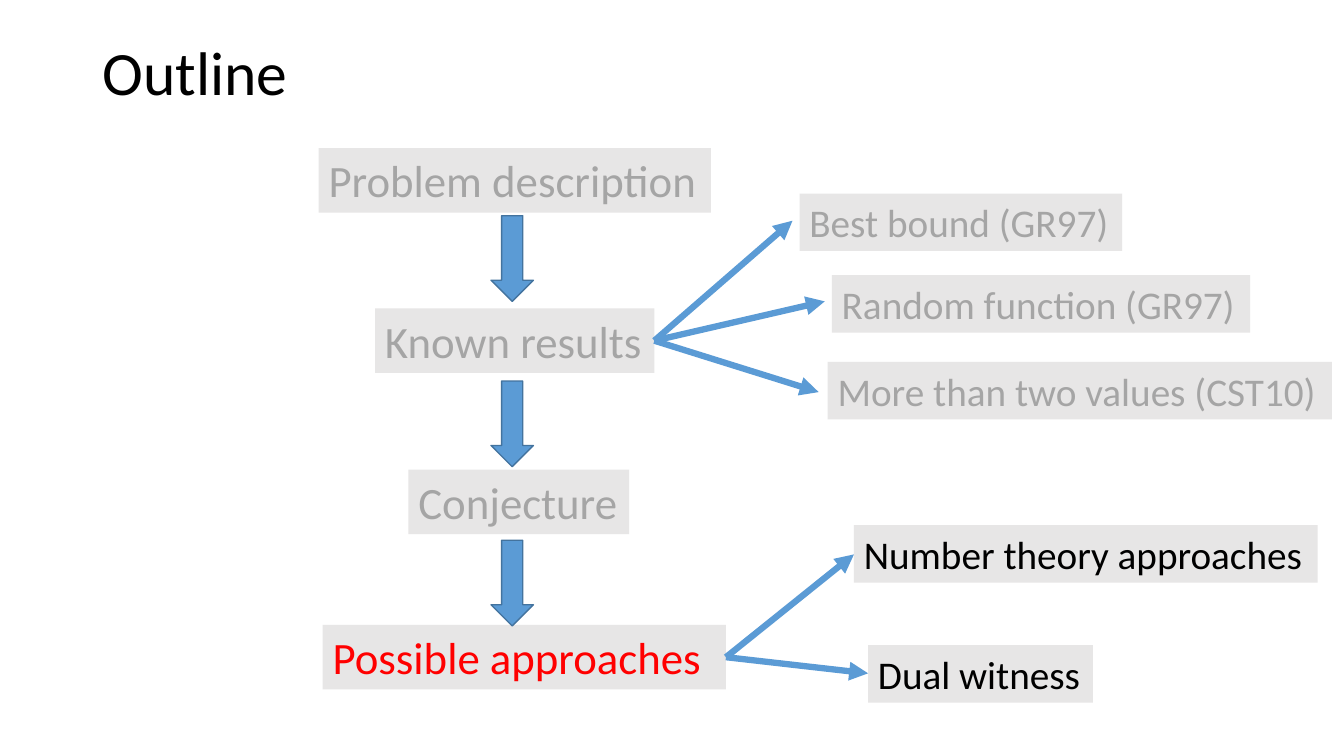
from dataclasses import dataclass

from lxml.etree import SubElement
from pptx import Presentation
from pptx.dml.color import RGBColor
from pptx.enum.shapes import MSO_CONNECTOR as Connector, MSO_SHAPE as Shape
from pptx.enum.text import MSO_ANCHOR as Anchor, PP_ALIGN as Align
from pptx.oxml.ns import qn
from pptx.util import Inches, Pt


@dataclass(frozen=True)
class Theme:
    font: str = "Calibri"
    title_size: int = 44
    step_size: int = 32
    detail_size: int = 28
    text: str = "000000"
    muted: str = "A5A5A5"
    current: str = "FF0000"
    panel: str = "E7E6E6"
    arrow: str = "5B9BD5"
    arrow_edge: str = "43739E"


def color(code):
    return RGBColor.from_string(code)


def write(shape, text, *, font, size, ink, anchor=Anchor.TOP, spacing=1.0):
    frame = shape.text_frame
    frame.word_wrap = True
    frame.vertical_anchor = anchor
    paragraph = frame.paragraphs[0]
    paragraph.alignment = Align.LEFT
    paragraph.line_spacing = spacing
    run = paragraph.add_run()
    run.text = text
    run.font.name = font
    run.font.size = Pt(size)
    run.font.color.rgb = color(ink)


class OutlineSlide:
    def __init__(self, slide, theme):
        self.shapes = slide.shapes
        self.theme = theme

    def title(self, text):
        box = self.shapes.add_textbox(Inches(0.92), Inches(0.02), Inches(11.5), Inches(1.45))
        write(box, text, font=self.theme.font, size=self.theme.title_size,
              ink=self.theme.text, anchor=Anchor.MIDDLE, spacing=0.9)

    def preset(self, kind, left, top, width, height, fill):
        shape = self.shapes.add_shape(
            kind, Inches(left), Inches(top), Inches(width), Inches(height))
        shape.shadow.inherit = False
        shape.fill.solid()
        shape.fill.fore_color.rgb = color(fill)
        return shape

    def topic(self, text, left, top, width, height, size, ink):
        panel = self.preset(Shape.RECTANGLE, left, top, width, height, self.theme.panel)
        panel.line.fill.background()
        write(panel, text, font=self.theme.font, size=size, ink=ink)

    def down_arrow(self, top):
        arrow = self.preset(Shape.DOWN_ARROW, 4.87, top, 0.42, 0.85, self.theme.arrow)
        arrow.line.color.rgb = color(self.theme.arrow_edge)
        arrow.line.width = Pt(1)

    def branch(self, start, end):
        """Draw a line with an arrowhead at its end."""
        line = self.shapes.add_connector(
            Connector.STRAIGHT, *(Inches(value) for value in (*start, *end)))
        line.line.color.rgb = color(self.theme.arrow)
        line.line.width = Pt(4.5)
        properties = line._element.spPr
        SubElement(properties.find(qn("a:ln")), qn("a:tailEnd"), type="triangle")
        SubElement(properties, qn("a:effectLst"))


def main():
    theme = Theme()
    deck = Presentation()
    deck.slide_width, deck.slide_height = Inches(13.33), Inches(7.5)
    outline = OutlineSlide(deck.slides.add_slide(deck.slide_layouts[6]), theme)

    outline.title("Outline")

    steps = [
        ("Problem description", 3.16, 1.47, 3.89, theme.muted),
        ("Known results", 3.72, 3.06, 2.77, theme.muted),
        ("Conjecture", 4.05, 4.66, 2.19, theme.muted),
        ("Possible approaches", 3.2, 6.2, 4, theme.current),
    ]
    for text, left, top, width, ink in steps:
        outline.topic(text, left, top, width, 0.64, theme.step_size, ink)

    for top in (2.14, 3.78, 5.36):
        outline.down_arrow(top)

    known_results, approaches = (6.49, 3.38), (7.2, 6.52)
    details = [
        ("Best bound (GR97)", 7.93, 1.92, 3.2, theme.muted, known_results, (7.86, 2.19)),
        ("Random function (GR97)", 8.25, 2.73, 4.15, theme.muted, known_results, (8.18, 2.99)),
        ("More than two values (CST10)", 8.21, 3.59, 5, theme.muted, known_results, (8.12, 3.89)),
        ("Number theory approaches", 8.47, 5.21, 4.6, theme.text, approaches, (8.47, 5.5)),
        ("Dual witness", 8.61, 6.4, 2.23, theme.text, approaches, (8.61, 6.68)),
    ]
    for text, left, top, width, ink, start, end in details:
        outline.topic(text, left, top, width, 0.57, theme.detail_size, ink)
        outline.branch(start, end)

    deck.save("out.pptx")


if __name__ == "__main__":
    main()
